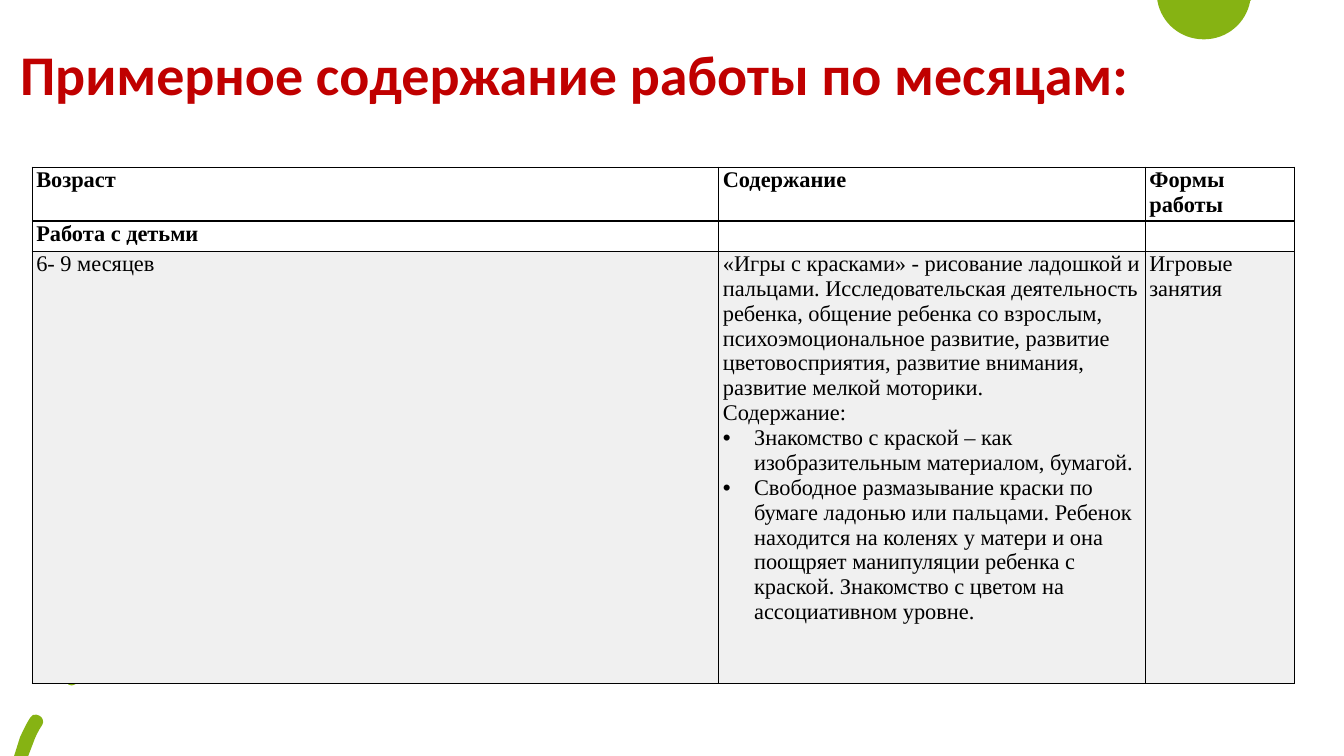
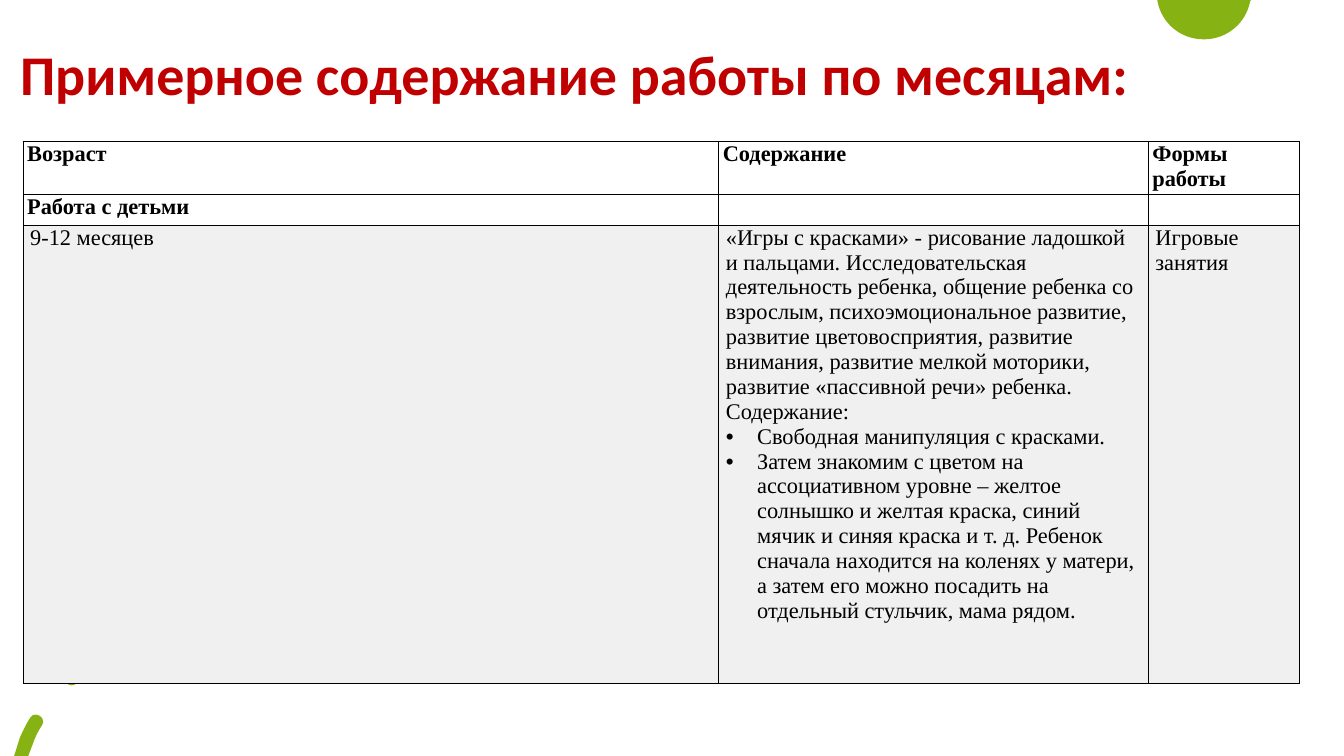
import lxml.etree
import pptx
import pptx.dml.color
import pptx.enum.text
import pptx.oxml
import pptx.oxml.ns
import pptx.util

Inches = pptx.util.Inches
Pt = pptx.util.Pt
qn = pptx.oxml.ns.qn

GREEN, RED, BLACK, GREY = "86B313", "C00000", "000000", "F0F0F0"
TITLE = "Примерное содержание работы по месяцам:"
TITLE_BOX = (0.1, 0.13, 12.32, 1.27)
HEADINGS = ["Возраст", "Содержание", "Формы работы"]
SECTION = ["Работа с детьми", "", ""]
BULLET_INDENT = 0.31

DOT = [[
    (11.48, 0), (12.41, 0), (12.4, 0.01),
    (12.36, 0.23, 12.17, 0.39, 11.94, 0.39),
    (11.71, 0.39, 11.52, 0.23, 11.48, 0.01),
]]
DASHES = [
    [
        (0.36, 7.09), (0.34, 7.08, 0.31, 7.1, 0.3, 7.12),
        (0.26, 7.18, 0.23, 7.25, 0.2, 7.31), (0.14, 7.5), (0.28, 7.5), (0.33, 7.37),
        (0.35, 7.31, 0.38, 7.25, 0.42, 7.19), (0.44, 7.16, 0.42, 7.11, 0.39, 7.1),
        (0.38, 7.09, 0.37, 7.09, 0.36, 7.09),
    ],
    [
        (1.05, 6.43), (1.04, 6.43, 1.03, 6.43, 1.03, 6.44),
        (0.9, 6.5, 0.77, 6.58, 0.67, 6.68), (0.64, 6.7, 0.63, 6.75, 0.66, 6.77),
        (0.67, 6.79, 0.69, 6.8, 0.71, 6.8), (0.73, 6.8, 0.74, 6.79, 0.76, 6.78),
        (0.86, 6.7, 0.97, 6.62, 1.09, 6.56), (1.12, 6.54, 1.14, 6.5, 1.12, 6.47),
        (1.11, 6.44, 1.08, 6.43, 1.05, 6.43),
    ],
    [
        (1.79, 6.25), (1.72, 6.25, 1.65, 6.26, 1.58, 6.27),
        (1.54, 6.27, 1.51, 6.31, 1.52, 6.35), (1.52, 6.38, 1.55, 6.41, 1.59, 6.41),
        (1.73, 6.39, 1.86, 6.39, 1.99, 6.4), (2.03, 6.41, 2.07, 6.38, 2.07, 6.35),
        (2.08, 6.31, 2.05, 6.27, 2.01, 6.27), (1.94, 6.26, 1.86, 6.25, 1.79, 6.25),
    ],
]

MONTHS = [
    {
        "corner": (0.32, 1.66),
        "columns": [6.81, 4.23, 1.48],
        "rows": [0.47, 0.29, 4.29],
        "inset": 0.04,
        "age": "6- 9 месяцев",
        "goals": "«Игры с красками» - рисование ладошкой и пальцами. Исследовательская "
                 "деятельность ребенка, общение ребенка со взрослым, психоэмоциональное "
                 "развитие, развитие цветовосприятия, развитие внимания, развитие мелкой "
                 "моторики.",
        "steps": [
            "Знакомство с краской – как изобразительным материалом, бумагой.",
            "Свободное размазывание краски по бумаге ладонью или пальцами. Ребенок "
            "находится на коленях у матери и она поощряет манипуляции ребенка с краской. "
            "Знакомство с цветом на ассоциативном уровне.",
        ],
    },
    {
        "corner": (0.23, 1.4),
        "columns": [6.9, 4.26, 1.5],
        "rows": [0.46, 0.28, 4.55],
        "inset": 0.07,
        "age": "9-12 месяцев",
        "goals": "«Игры с красками» - рисование ладошкой и пальцами. Исследовательская "
                 "деятельность ребенка, общение ребенка со взрослым, психоэмоциональное "
                 "развитие, развитие цветовосприятия, развитие внимания, развитие мелкой "
                 "моторики, развитие «пассивной речи» ребенка.",
        "steps": [
            "Свободная манипуляция с красками.",
            "Затем знакомим с цветом на ассоциативном уровне – желтое солнышко и желтая "
            "краска, синий мячик и синяя краска и т. д. Ребенок сначала находится на "
            "коленях у матери, а затем его можно посадить на отдельный стульчик, мама "
            "рядом.",
        ],
    },
]


def color(value):
    return pptx.dml.color.RGBColor.from_string(value)


def write(para, text, font="Times New Roman", size=16, fill=BLACK, bold=False,
          bullet=False, spacing=None):
    span = para.add_run()
    span.text = text
    span.font.name = font
    span.font.size = Pt(size)
    span.font.bold = bold
    span.font.color.rgb = color(fill)
    if spacing:
        para.line_spacing = spacing
    if bullet:
        properties = para._p.get_or_add_pPr()
        properties.set("marL", str(Inches(BULLET_INDENT)))
        properties.set("indent", str(-Inches(BULLET_INDENT)))
        lxml.etree.SubElement(properties, qn("a:buFont")).set("typeface", "Arial")
        lxml.etree.SubElement(properties, qn("a:buChar")).set("char", "•")


def segment_points(segment):
    lengths = [Inches(number) for number in segment]
    return list(zip(lengths[::2], lengths[1::2]))


def bend_segments(shape, segments):
    lines = iter(list(shape._element.iter(qn("a:lnTo"))))
    for segment in segments:
        line = next(lines)
        if len(segment) == 6:
            curve = lxml.etree.Element(qn("a:cubicBezTo"))
            line.addprevious(curve)
            for part in (line, next(lines), next(lines)):
                curve.append(part[0])
                part.getparent().remove(part)


def add_outlines(page, outlines):
    builder = page.shapes.build_freeform(*segment_points(outlines[0][0])[0], scale=1.0)
    for number, (start, *segments) in enumerate(outlines):
        if number:
            builder.move_to(*segment_points(start)[0])
        points = [point for segment in segments for point in segment_points(segment)]
        builder.add_line_segments(points, close=True)
    shape = builder.convert_to_shape()
    bend_segments(shape, [segment for outline in outlines for segment in outline[1:]])
    shape.shadow.inherit = False
    shape.fill.solid()
    shape.fill.fore_color.rgb = color(GREEN)
    shape.line.fill.background()


def add_title(page, text, box):
    frame = page.shapes.add_textbox(*map(Inches, box)).text_frame
    frame.word_wrap = True
    frame.vertical_anchor = pptx.enum.text.MSO_ANCHOR.MIDDLE
    write(frame.paragraphs[0], text, font="Calibri", size=40, fill=RED, bold=True,
          spacing=0.9)


def add_borders(cell):
    properties = cell._tc.get_or_add_tcPr()
    for side in ("lnL", "lnR", "lnT", "lnB"):
        line = lxml.etree.SubElement(properties, qn("a:" + side), w=str(Pt(1)))
        fill = lxml.etree.SubElement(line, qn("a:solidFill"))
        lxml.etree.SubElement(fill, qn("a:srgbClr"), val=BLACK)


def fill_cell(cell, paragraphs, inset, bold, fill):
    cell.margin_left = cell.margin_right = Inches(inset)
    cell.margin_top = cell.margin_bottom = 0
    add_borders(cell)
    if fill:
        cell.fill.solid()
        cell.fill.fore_color.rgb = color(fill)
    else:
        cell.fill.background()
    frame = cell.text_frame
    for number, (text, bullet) in enumerate(paragraphs):
        para = frame.add_paragraph() if number else frame.paragraphs[0]
        if text:
            write(para, text, bold=bold, bullet=bullet)


def add_month_table(page, month):
    box = (*month["corner"], sum(month["columns"]), sum(month["rows"]))
    table = page.shapes.add_table(3, 3, *map(Inches, box)).table
    table.first_row = table.horz_banding = False
    for column, width in zip(table.columns, month["columns"]):
        column.width = Inches(width)
    for row, height in zip(table.rows, month["rows"]):
        row.height = Inches(height)

    content = [(month["goals"], False), ("Содержание:", False)]
    content += [(step, True) for step in month["steps"]]
    heading_rows = [[[(text, False)] for text in texts] for texts in (HEADINGS, SECTION)]
    body = [[(month["age"], False)], content, [("Игровые занятия", False)]]
    for row, cells in enumerate(heading_rows + [body]):
        is_body = row == 2
        for column, paragraphs in enumerate(cells):
            fill_cell(table.cell(row, column), paragraphs,
                      inset=month["inset"] if is_body else 0.04,
                      bold=not is_body, fill=GREY if is_body else None)


def add_month_page(deck, month):
    page = deck.slides.add_slide(deck.slide_layouts[6])
    add_outlines(page, DOT)
    add_outlines(page, DASHES)
    add_title(page, TITLE, TITLE_BOX)
    add_month_table(page, month)


def main():
    deck = pptx.Presentation()
    deck.slide_width = Inches(13.33)
    deck.slide_height = Inches(7.5)
    for month in MONTHS:
        add_month_page(deck, month)
    deck.save("out.pptx")


if __name__ == "__main__":
    main()
